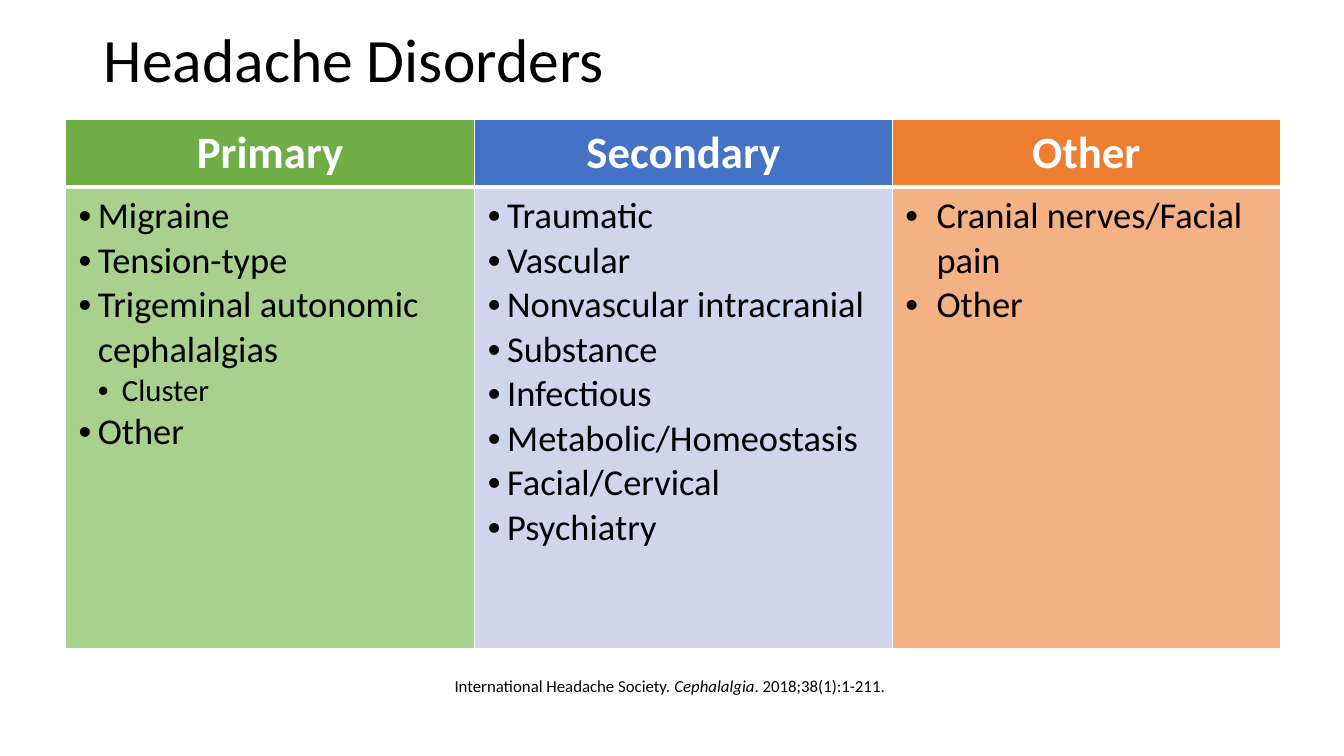
import pptx
import pptx.dml.color
import pptx.enum.text
import pptx.oxml
import pptx.oxml.ns
import pptx.util

PX = 9144  # 100 px to the inch
FONT = "Calibri"
BLACK, WHITE = "000000", "FFFFFF"
ALIGN = pptx.enum.text.PP_ALIGN
ANCHOR = pptx.enum.text.MSO_ANCHOR
NAMESPACE = pptx.oxml.ns.nsdecls("a")

# Bullet styles: left margin and hanging indent in px, text size in points
ITEM = (19, 19, 26)
SUBITEM = (43, 24, 22)
WIDE_ITEM = (31, 31, 26)

# Heading, column width, header fill, body fill, list of (text, bullet style)
COLUMNS = [
    ("Primary", 406, "70AD47", "A9D18E", [
        ("Migraine", ITEM),
        ("Tension-type", ITEM),
        ("Trigeminal autonomic cephalalgias", ITEM),
        ("Cluster", SUBITEM),
        ("Other", ITEM),
    ]),
    ("Secondary", 414, "4472C4", "CFD5EA", [
        (text, ITEM) for text in (
            "Traumatic", "Vascular", "Nonvascular intracranial", "Substance",
            "Infectious", "Metabolic/Homeostasis", "Facial/Cervical", "Psychiatry")
    ]),
    ("Other", 385, "ED7D31", "F4B183", [
        ("Cranial nerves/Facial pain", WIDE_ITEM),
        ("Other", WIDE_ITEM),
    ]),
]
ROW_HEIGHTS = (67, 458)


def px(length):
    return pptx.util.Emu(length * PX)


def color(hex_value):
    return pptx.dml.color.RGBColor.from_string(hex_value)


def set_font(para, size, hex_value, bold=False):
    para.font.name = FONT
    para.font.size = pptx.util.Pt(size)
    para.font.bold = bold
    para.font.color.rgb = color(hex_value)


def add_bullet(para, margin, hanging):
    properties = para._p.get_or_add_pPr()
    properties.set("marL", str(px(margin)))
    properties.set("indent", str(-px(hanging)))
    for element in ('buFont {} typeface="Arial"', 'buChar {} char="•"'):
        properties.append(pptx.oxml.parse_xml(f"<a:{element.format(NAMESPACE)}/>"))


def style_cell(cell, fill, top, bottom):
    """Set margins, fill and white borders; top and bottom are widths in points."""
    cell.margin_left = cell.margin_right = px(13)
    cell.margin_top = cell.margin_bottom = px(7)
    properties = cell._tc.get_or_add_tcPr()
    for side, width in (("L", 1), ("R", 1), ("T", top), ("B", bottom)):
        properties.append(pptx.oxml.parse_xml(
            f'<a:ln{side} {NAMESPACE} w="{pptx.util.Pt(width)}"><a:solidFill>'
            f'<a:srgbClr val="{WHITE}"/></a:solidFill></a:ln{side}>'))
    cell.fill.solid()
    cell.fill.fore_color.rgb = color(fill)


def add_title(page, left, top, width, height):
    frame = page.shapes.add_textbox(px(left), px(top), px(width), px(height)).text_frame
    frame.word_wrap = True
    frame.vertical_anchor = ANCHOR.MIDDLE
    para = frame.paragraphs[0]
    para.text = "Headache Disorders"
    para.line_spacing = 0.9
    set_font(para, 44, BLACK)


def fill_list(cell, items):
    frame = cell.text_frame
    for index, (text, (margin, hanging, size)) in enumerate(items):
        para = frame.add_paragraph() if index else frame.paragraphs[0]
        para.text = text
        add_bullet(para, margin, hanging)
        set_font(para, size, BLACK)


def add_disorder_table(page, left, top):
    width = sum(column[1] for column in COLUMNS)
    table = page.shapes.add_table(
        len(ROW_HEIGHTS), len(COLUMNS), px(left), px(top),
        px(width), px(sum(ROW_HEIGHTS))).table
    table.first_row = table.horz_banding = False
    for row, height in zip(table.rows, ROW_HEIGHTS):
        row.height = px(height)
    for index, (heading, width, header_fill, body_fill, items) in enumerate(COLUMNS):
        table.columns[index].width = px(width)
        header, body = table.cell(0, index), table.cell(1, index)
        style_cell(header, header_fill, top=1, bottom=3)
        style_cell(body, body_fill, top=3, bottom=1)
        para = header.text_frame.paragraphs[0]
        para.text = heading
        para.alignment = ALIGN.CENTER
        set_font(para, 32, WHITE, bold=True)
        fill_list(body, items)


def add_citation(page, left, top, width, height):
    frame = page.shapes.add_textbox(px(left), px(top), px(width), px(height)).text_frame
    frame.word_wrap = False
    frame.auto_size = pptx.enum.text.MSO_AUTO_SIZE.SHAPE_TO_FIT_TEXT
    para = frame.paragraphs[0]
    set_font(para, 12, BLACK)
    for text, italic in (("International Headache Society. ", False),
                         ("Cephalalgia", True),
                         (". 2018;38(1):1-211.", False)):
        span = para.add_run()
        span.text = text
        span.font.italic = italic


def main():
    deck = pptx.Presentation()
    deck.slide_width, deck.slide_height = px(1333), px(750)
    page = deck.slides.add_slide(deck.slide_layouts[6])
    add_title(page, 93, 15, 1150, 94)
    add_disorder_table(page, 65, 118)
    add_citation(page, 441, 665, 452, 30)
    deck.save("out.pptx")


if __name__ == "__main__":
    main()
